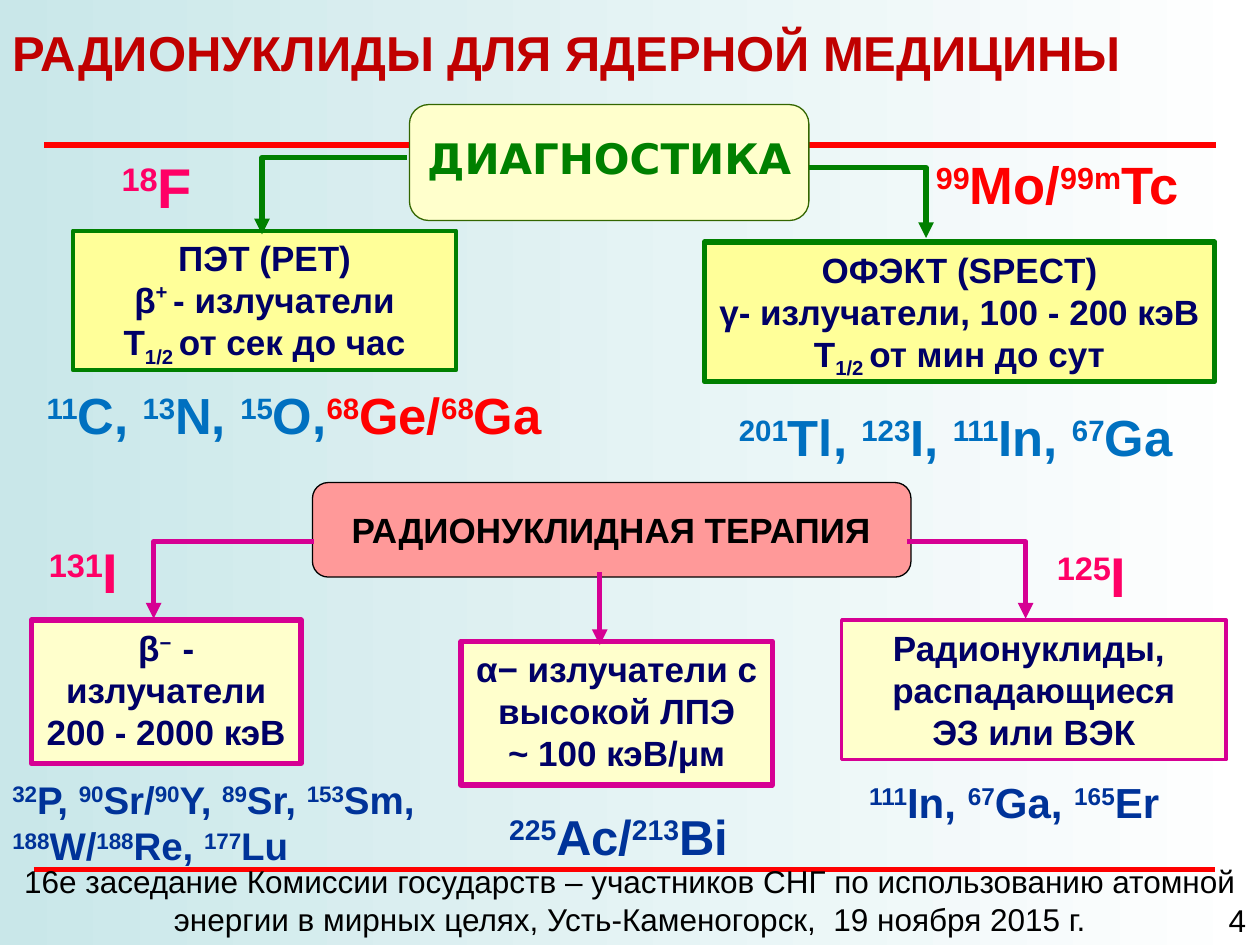
from pptx import Presentation, util as u
from pptx.dml.color import RGBColor
from pptx.enum import shapes, text
from pptx.oxml import ns, xmlchemy

Inches = u.Inches
LEFT, CENTER = text.PP_ALIGN.LEFT, text.PP_ALIGN.CENTER
THEME = {
    "font": "Arial", "display": "DejaVu Sans",
    "title": "C00000", "rule": "FF0000", "green": "008000", "dark_green": "336600",
    "magenta": "D60093", "pink": "FF0066", "red": "FF0000", "blue": "0070C0",
    "navy": "000066", "royal": "003399", "black": "000000",
    "cream": "FFFFCC", "yellow": "FFFF99", "salmon": "FF9999",
    "background": ("C9E7E9", "FFFFFF"),
    "size": {"title": 28, "heading": 24, "body": 20, "key": 32, "generator": 30,
             "isotope": 29, "alpha": 28, "capture": 24, "beta": 22, "footer": 18},
}
BASELINES = {"^": "30000", "*": "40000", "_": "-25000"}


def write_text(shape, lines, size, color, align=CENTER, wrap=True, bold=True, font="font"):
    frame_format = {"word_wrap": wrap, "vertical_anchor": text.MSO_ANCHOR.TOP,
                    "auto_size": text.MSO_AUTO_SIZE.SHAPE_TO_FIT_TEXT}
    frame = shape.text_frame
    for name, value in frame_format.items():
        setattr(frame, name, value)
    font_format = {"name": THEME[font], "size": u.Pt(THEME["size"][size]), "bold": bold}
    for number, line in enumerate(lines):
        paragraph = frame.paragraphs[0] if number == 0 else frame.add_paragraph()
        paragraph.alignment = align
        run_color = color
        for piece in line.split("{"):
            script, closing, plain = piece.partition("}")
            if not closing:
                script, plain = "", piece
            if script.startswith("!"):
                run_color, script = "red", script[1:]
            for content, baseline in ((script[1:], BASELINES.get(script[:1])), (plain, None)):
                if not content:
                    continue
                run = paragraph.add_run()
                run.text = content
                for name, value in font_format.items():
                    setattr(run.font, name, value)
                run.font.color.rgb = RGBColor.from_string(THEME[run_color])
                if baseline:
                    run.font._element.set("baseline", baseline)


def draw_line(start, end, color, bent=False, arrow=True):
    kind = shapes.MSO_CONNECTOR.ELBOW if bent else shapes.MSO_CONNECTOR.STRAIGHT
    connector = slide.shapes.add_connector(kind, *map(Inches, start + end))
    connector.line.color.rgb = RGBColor.from_string(THEME[color])
    connector.line.width = u.Pt(3)
    properties = connector._element.spPr
    if bent:
        properties.find(ns.qn("a:prstGeom")).set("prst", "bentConnector2")
    if arrow:
        tail = xmlchemy.OxmlElement("a:tailEnd")
        tail.set("type", "triangle")
        connector.line._get_or_add_ln().append(tail)
    properties.append(xmlchemy.OxmlElement("a:effectLst"))


presentation = Presentation()
presentation.slide_width, presentation.slide_height = Inches(10), Inches(7.5)
slide = presentation.slides.add_slide(presentation.slide_layouts[5])

background = slide.background.fill
background.gradient()
background.gradient_angle = 0
for stop, position, color in zip(background.gradient_stops, (0, 1), THEME["background"]):
    stop.position = position
    stop.color.rgb = RGBColor.from_string(color)

draw_line((0.35, 1.15), (9.65, 1.15), "rule", arrow=False)
draw_line((0.27, 6.9), (9.64, 6.9), "rule", arrow=False)

title = slide.shapes.title
title.left, title.top, title.width, title.height = map(Inches, (0, 0.13, 9.02, 0.57))
write_text(title, ["РАДИОНУКЛИДЫ ДЛЯ ЯДЕРНОЙ МЕДИЦИНЫ"], "title", "title", LEFT)

ROUNDED, RECTANGLE = shapes.MSO_SHAPE.ROUNDED_RECTANGLE, shapes.MSO_SHAPE.RECTANGLE
boxes = [
    (ROUNDED, (3.25, 0.83, 3.17, 0.92), "cream", "dark_green", 0.75, True, []),
    (RECTANGLE, (0.58, 1.83, 3.04, 1.11), "yellow", "green", 2.25, True,
     ["ПЭТ (PET)", "β{*+ }- излучатели", "T{_1/2 }от сек до час"]),
    (RECTANGLE, (5.59, 1.92, 4.05, 1.11), "yellow", "green", 3, False,
     ["ОФЭКТ (SPECT)", "γ- излучатели, 100 - 200 кэВ", "T{_1/2 }от мин до сут"]),
    (ROUNDED, (2.48, 3.83, 4.75, 0.75), "salmon", "black", 0.75, True, []),
    (RECTANGLE, (0.25, 4.92, 2.14, 1.14), "cream", "magenta", 3, True,
     ["β{^−  }- излучатели", "200 - 2000 кэВ"]),
    (RECTANGLE, (3.66, 5.09, 2.47, 1.14), "cream", "magenta", 3, False,
     ["α− излучатели с", "высокой ЛПЭ", "~ 100 кэВ/μм"]),
    (RECTANGLE, (6.68, 4.92, 3.05, 1.11), "cream", "magenta", 2, True,
     ["Радионуклиды, ", "распадающиеся", "ЭЗ или ВЭК"]),
]
for kind, place, fill, outline, width, wrap, lines in boxes:
    box = slide.shapes.add_shape(kind, *map(Inches, place))
    box.shadow.inherit = False
    box.fill.solid()
    box.fill.fore_color.rgb = RGBColor.from_string(THEME[fill])
    box.line.color.rgb = RGBColor.from_string(THEME[outline])
    box.line.width = u.Pt(width)
    if lines:
        write_text(box, lines, "body", "navy", wrap=wrap)

for start, end, color, bent in [
    ((3.23, 1.25), (2.08, 1.86), "green", True),
    ((6.42, 1.33), (7.35, 1.89), "green", True),
    ((2.49, 4.3), (1.22, 4.91), "magenta", True),
    ((4.76, 4.54), (4.76, 5.12), "magenta", False),
    ((7.2, 4.3), (8.14, 4.91), "magenta", True),
]:
    draw_line(start, end, color, bent)

labels = [
    ((3.25, 1, 3.17, 0.5), "ДИАГНОСТИКА", "heading", "green", {"font": "display"}),
    ((2.56, 3.99, 4.58, 0.43), "РАДИОНУКЛИДНАЯ ТЕРАПИЯ", "body", "black", {}),
    ((5.42, 3.17, 4.33, 0.58), "{^201}Tl, {^123}I, {^111}In, {^67}Ga", "isotope", "blue", {}),
    ((7.33, 1.16, 2.67, 0.63), "{^99}Mo/{^99m}Tc", "generator", "red", {"align": LEFT}),
    ((0.58, 1.16, 1.33, 0.63), "{^18}F", "key", "pink", {}),
    ((0.17, 3, 4.33, 0.58), "{^11}С, {^13}N, {^15}О,{!^68}Ge/{^68}Ga", "isotope", "blue", {}),
    ((0, 4.22, 1.33, 0.63), "{^131}I", "key", "pink", {}),
    ((0, 6.11, 3.66, 0.84),
     "{^32}Р, {^90}Sr/{^90}Y, {^89}Sr, {^153}Sm, {^188}W/{^188}Re, {^177}Lu",
     "beta", "royal", {"align": LEFT}),
    ((3.66, 6.35, 2.5, 0.57), "{^225}Ас/{^213}Bi", "alpha", "royal", {}),
    ((6.8, 6.11, 3, 0.5), "{^111}In, {^67}Ga, {^165}Er", "capture", "royal", {"align": LEFT}),
    ((8.08, 4.25, 1.17, 0.63), "{^125}I", "key", "pink", {}),
    ((9.64, 7.1, 0.36, 0.4), "4", "footer", "black", {"bold": False}),
    ((0, 6.79, 10, 0.71),
     "16е заседание Комиссии государств – участников СНГ по использованию атомной "
     "энергии в мирных целях, Усть-Каменогорск,  19 ноября 2015 г.",
     "footer", "black", {"bold": False}),
]
for place, line, size, color, options in labels:
    label = slide.shapes.add_textbox(*map(Inches, place))
    write_text(label, [line], size, color, **options)

presentation.save("out.pptx")
